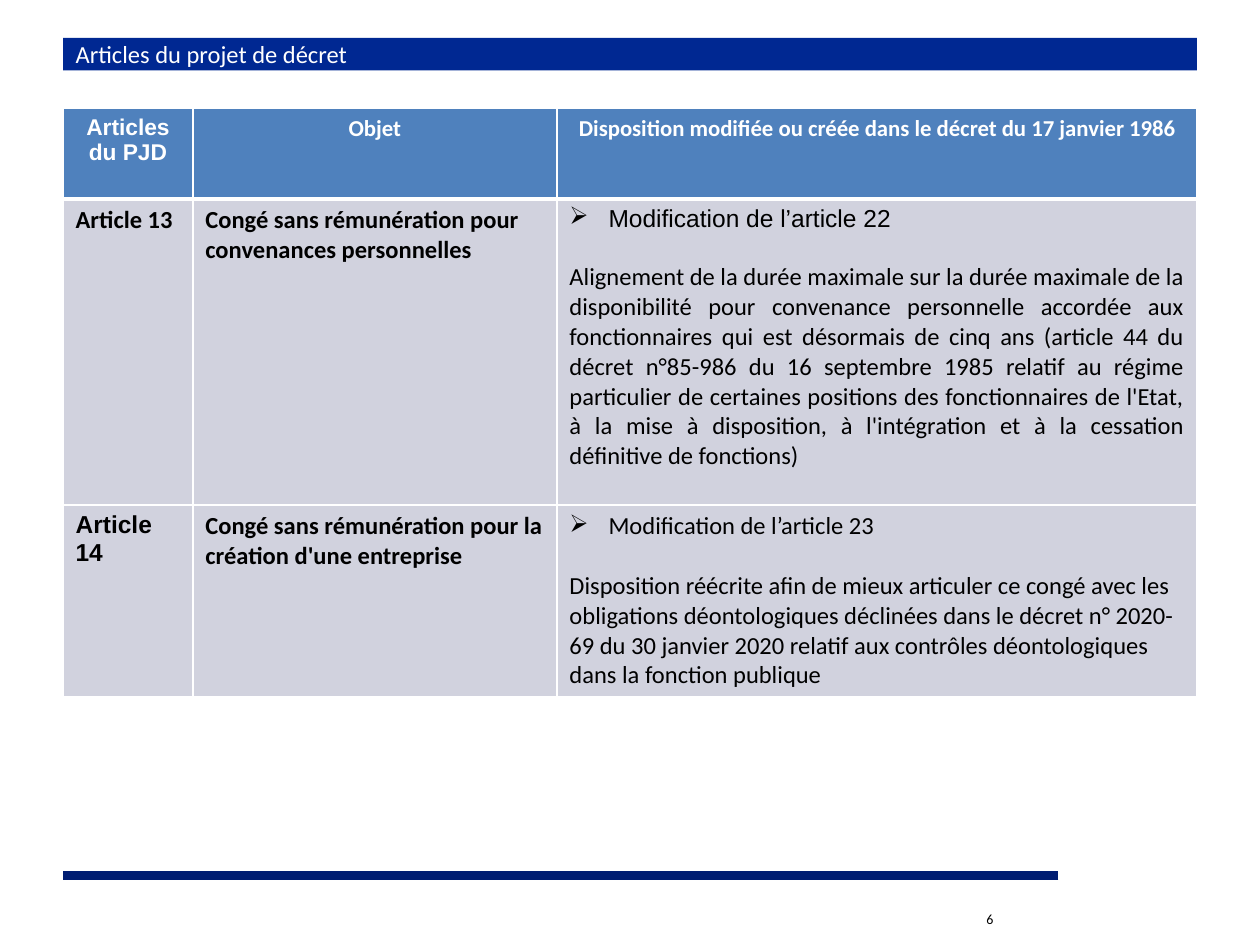
from dataclasses import dataclass

from lxml.etree import SubElement
from pptx import Presentation
from pptx.dml.color import RGBColor
from pptx.enum.shapes import MSO_CONNECTOR
from pptx.enum.text import MSO_ANCHOR, MSO_AUTO_SIZE, PP_ALIGN
from pptx.oxml import parse_xml
from pptx.oxml.ns import nsdecls, qn
from pptx.util import Inches, Pt

COLORS = {
    "banner": "002892",
    "footer": "001D72",
    "header": "4F81BD",
    "body": "D1D2DE",
    "white": "FFFFFF",
    "black": "000000",
}
COLUMN_WIDTHS = (1.03, 2.89, 5.08)
ROW_HEIGHTS = (0.72, 2.43, 1.52)


@dataclass(frozen=True)
class Line:
    text: str
    font: str = "Calibri"
    size: int = 14
    bold: bool = False
    color: str = "black"
    align: PP_ALIGN = PP_ALIGN.LEFT
    bullet: bool = False


def heading(text: str, font: str = "Calibri") -> list[Line]:
    return [Line(text, font, 13, True, "white", PP_ALIGN.CENTER)]


def label(text: str, font: str = "Calibri") -> list[Line]:
    return [Line(text, font, bold=True)]


ROWS = [
    [
        heading("Articles du PJD", "Arial"),
        heading("Objet"),
        heading("Disposition modifiée ou créée dans le décret du 17 janvier 1986"),
    ],
    [
        label("Article 13"),
        label("Congé sans rémunération pour convenances personnelles"),
        [
            Line("Modification de l’article 22", "Arial", bullet=True),
            Line(
                "Alignement de la durée maximale sur la durée maximale de la "
                "disponibilité pour convenance personnelle accordée aux "
                "fonctionnaires qui est désormais de cinq ans (article 44 du "
                "décret n°85-986 du 16 septembre 1985 relatif au régime "
                "particulier de certaines positions des fonctionnaires de l'Etat, "
                "à la mise à disposition, à l'intégration et à la cessation "
                "définitive de fonctions)",
                align=PP_ALIGN.JUSTIFY,
            ),
        ],
    ],
    [
        label("Article 14", "Arial"),
        label("Congé sans rémunération pour la création d'une entreprise"),
        [
            Line("Modification de l’article 23", bullet=True),
            Line(
                "Disposition réécrite afin de mieux articuler ce congé avec les "
                "obligations déontologiques déclinées dans le décret n° 2020-69 "
                "du 30 janvier 2020 relatif aux contrôles déontologiques dans la "
                "fonction publique"
            ),
        ],
    ],
]


def rgb(name: str) -> RGBColor:
    return RGBColor.from_string(COLORS[name])


def write_lines(frame, lines: list[Line]) -> None:
    frame.word_wrap = True
    for index, line in enumerate(lines):
        paragraph = frame.add_paragraph() if index else frame.paragraphs[0]
        paragraph.alignment = line.align
        if line.bullet:
            paragraph.space_after = Pt(17)
            properties = paragraph._p.get_or_add_pPr()
            properties.set("marL", str(Inches(0.31)))
            properties.set("indent", str(-Inches(0.31)))
            SubElement(properties, qn("a:buChar")).set("char", "➢")
        run = paragraph.add_run()
        run.text = line.text
        run.font.name = line.font
        run.font.size = Pt(line.size)
        run.font.bold = line.bold
        run.font.color.rgb = rgb(line.color)


def add_borders(cell, bottom: int) -> None:
    """Draw white borders, with the bottom one in its own width in points."""
    properties = cell._tc.get_or_add_tcPr()
    for index, (side, width) in enumerate(
        {"L": 1, "R": 1, "T": 1, "B": bottom}.items()
    ):
        border = parse_xml(
            f'<a:ln{side} {nsdecls("a")} w="{Pt(width)}"><a:solidFill>'
            f'<a:srgbClr val="{COLORS["white"]}"/></a:solidFill></a:ln{side}>'
        )
        properties.insert(index, border)


def add_banner(slide, text: str) -> None:
    title = slide.shapes.title
    title.left, title.top = Inches(0.5), Inches(0.3)
    title.width, title.height = Inches(9), Inches(0.26)
    title.fill.solid()
    title.fill.fore_color.rgb = rgb("banner")
    title.text_frame.auto_size = MSO_AUTO_SIZE.NONE
    title.text_frame.vertical_anchor = MSO_ANCHOR.MIDDLE
    write_lines(title.text_frame, [Line(text, color="white")])


def add_articles_table(slide) -> None:
    table = slide.shapes.add_table(
        len(ROWS), len(COLUMN_WIDTHS), Inches(0.5), Inches(0.86),
        Inches(sum(COLUMN_WIDTHS)), Inches(sum(ROW_HEIGHTS)),
    ).table
    for column, width in zip(table.columns, COLUMN_WIDTHS):
        column.width = Inches(width)
    for row_index, (row, height) in enumerate(zip(ROWS, ROW_HEIGHTS)):
        table.rows[row_index].height = Inches(height)
        is_header = row_index == 0
        for column_index, lines in enumerate(row):
            cell = table.cell(row_index, column_index)
            cell.fill.solid()
            cell.fill.fore_color.rgb = rgb("header" if is_header else "body")
            add_borders(cell, 3 if is_header else 1)
            write_lines(cell.text_frame, lines)


def add_footer(slide, number: str) -> None:
    rule = slide.shapes.add_connector(
        MSO_CONNECTOR.STRAIGHT, Inches(8.4), Inches(6.95), Inches(0.5), Inches(6.95)
    )
    rule.line.color.rgb = rgb("footer")
    rule.line.width = Pt(5)
    SubElement(rule._element.spPr, qn("a:effectLst"))
    page = slide.shapes.add_textbox(
        Inches(7.73), Inches(7.18), Inches(2.26), Inches(0.5)
    )
    write_lines(page.text_frame, [Line(number, size=8)])


def main() -> None:
    deck = Presentation()
    deck.slide_width, deck.slide_height = Inches(10), Inches(7.5)
    slide = deck.slides.add_slide(deck.slide_layouts.get_by_name("Title Only"))
    add_footer(slide, "6")
    add_banner(slide, "Articles du projet de décret")
    add_articles_table(slide)
    deck.save("out.pptx")


if __name__ == "__main__":
    main()
